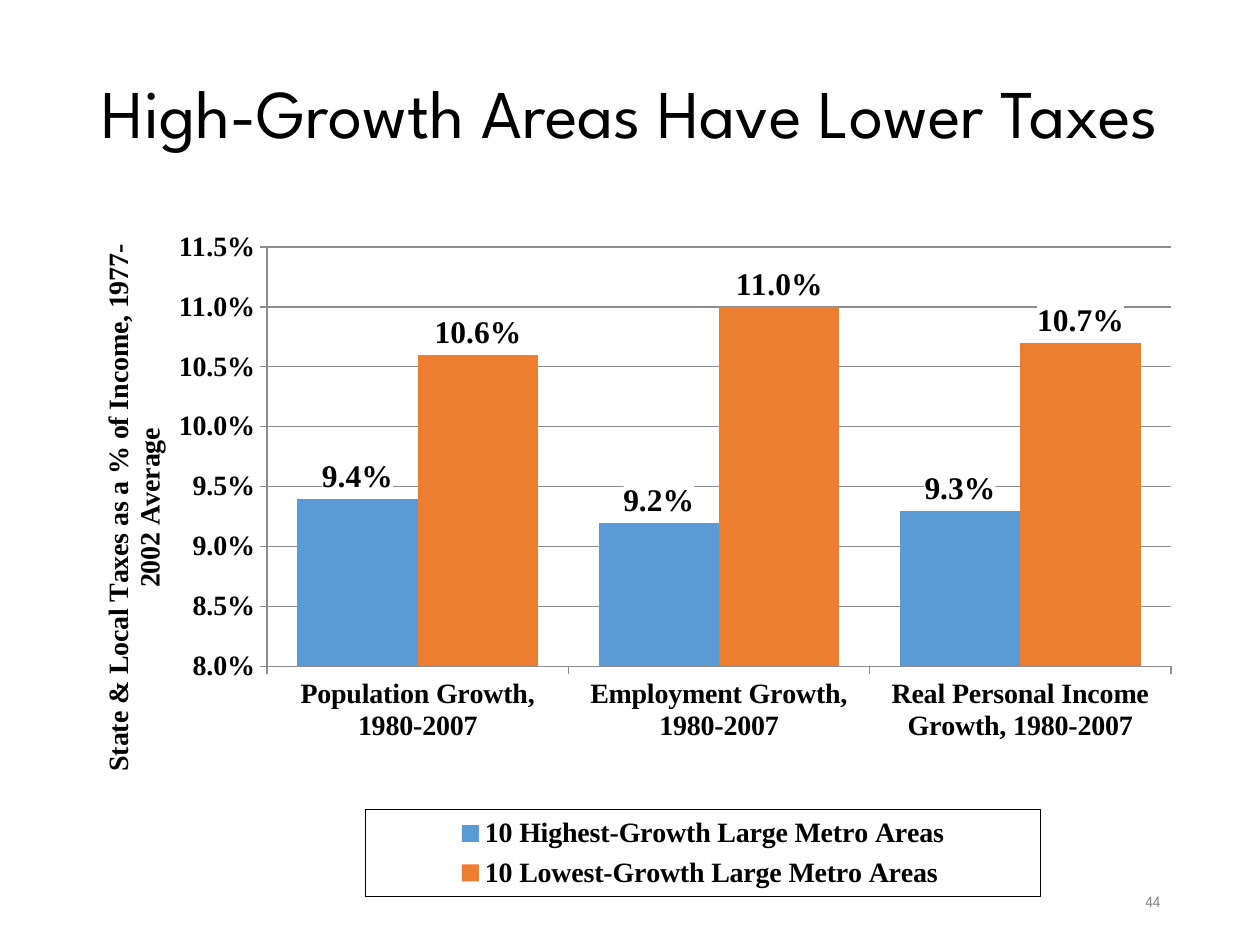
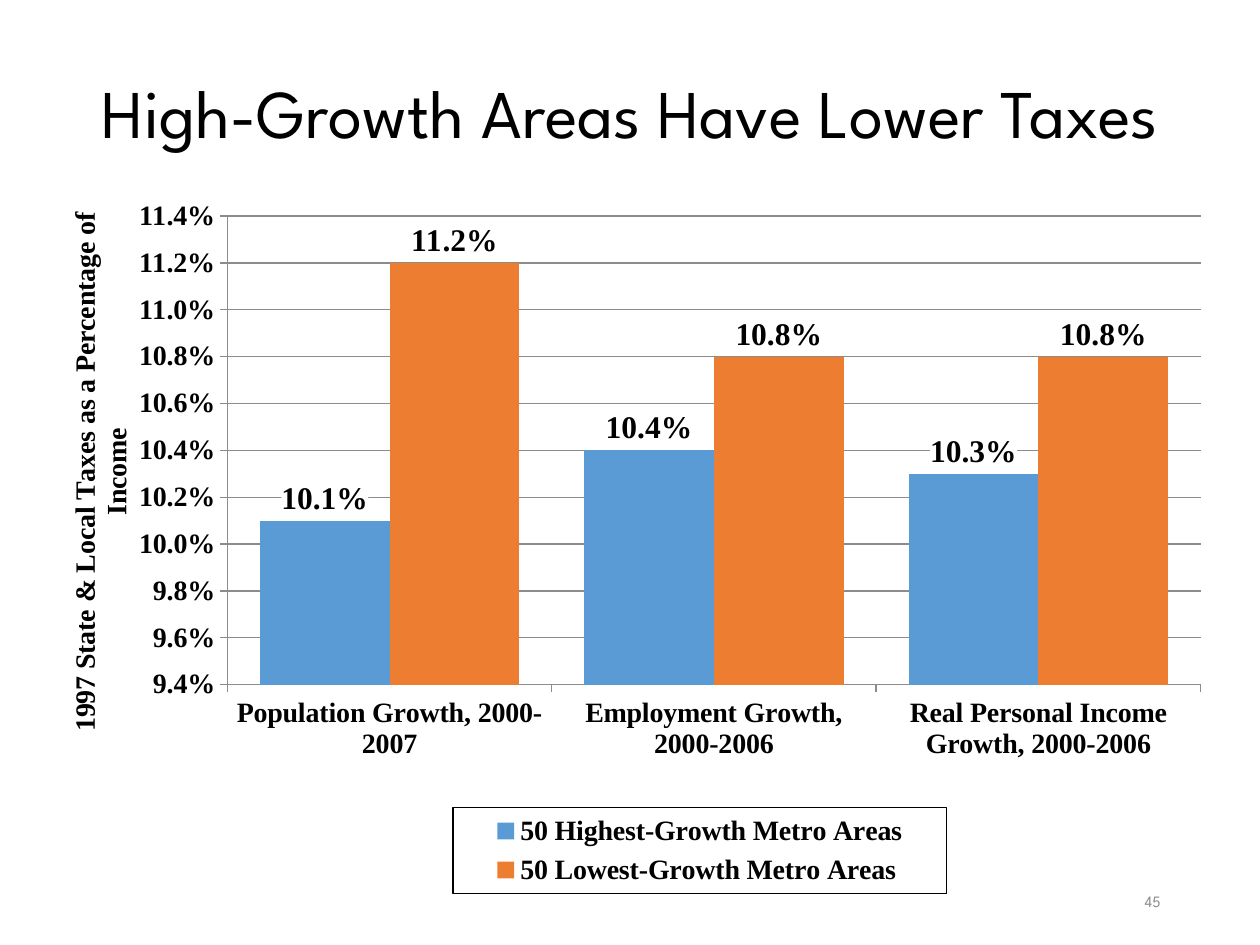
from dataclasses import dataclass
from lxml.etree import SubElement
from pptx import Presentation
from pptx.chart.data import CategoryChartData
from pptx.dml.color import RGBColor
from pptx.enum.chart import XL_CHART_TYPE, XL_LABEL_POSITION, XL_LEGEND_POSITION, XL_TICK_MARK
from pptx.enum.text import MSO_ANCHOR, PP_ALIGN
from pptx.oxml import parse_xml
from pptx.oxml.ns import nsdecls, qn
from pptx.util import Inches, Pt


@dataclass(frozen=True)
class Theme:
    black: RGBColor = RGBColor(0, 0, 0)
    gray: RGBColor = RGBColor(0x8C, 0x8C, 0x8C)
    series: tuple = (RGBColor(0x5B, 0x9B, 0xD5), RGBColor(0xED, 0x7D, 0x31))
    head_font: str = "League Spartan"
    chart_font: str = "Times New Roman"
    title: int = 39
    value: int = 18
    axis: int = 16
    footer: int = 9


T = Theme()


def write(tf, text, size, color=T.black, font=T.head_font, bold=False, align=PP_ALIGN.CENTER, spacing=None):
    p = tf.paragraphs[0]
    p.alignment, p.line_spacing = align, spacing
    r = p.add_run()
    r.text = text
    r.font.size, r.font.name, r.font.bold = Pt(size), font, bold
    r.font.color.rgb = color


def place(parent, index, target=None, **fractions):
    """Put a manual layout into a chart part, as fractions of the chart."""
    for old in parent.findall(qn("c:layout")):
        parent.remove(old)
    layout = parse_xml(f"<c:layout {nsdecls('c')}/>")
    parent.insert(index, layout)
    manual = SubElement(layout, qn("c:manualLayout"))
    if target:
        SubElement(manual, qn("c:layoutTarget")).set("val", target)
    for key in "xy":
        SubElement(manual, qn(f"c:{key}Mode")).set("val", "edge")
    for key, value in fractions.items():
        SubElement(manual, qn(f"c:{key}")).set("val", str(value))


TITLE = "High-Growth Areas Have Lower Taxes"
MEASURES = ["Population Growth", "Employment Growth", "Real Personal Income Growth"]
SLIDES = [
    dict(number=44, box=(0.5, 1.75, 9, 5.42), scale=(0.08, 0.115, 0.005),
         axis_title="State & Local Taxes as a % of Income, 1977-2002 Average",
         periods=["1980-2007"] * 3,
         series={"10 Highest-Growth Large Metro Areas": (0.094, 0.092, 0.093),
                 "10 Lowest-Growth Large Metro Areas": (0.106, 0.11, 0.107)},
         plot=dict(x=0.18, y=0.039, w=0.797, h=0.614),
         legend=dict(x=0.267, y=0.863, w=0.595, h=0.127),
         axis_at=dict(x=0.028, y=0.028)),
    dict(number=45, box=(0.33, 1.5, 9.33, 5.67), scale=(0.094, 0.114, 0.002),
         axis_title="1997 State & Local Taxes as a Percentage of Income",
         periods=["2000-2007", "2000-2006", "2000-2006"],
         series={"50 Highest-Growth Metro Areas": (0.101, 0.104, 0.103),
                 "50 Lowest-Growth Metro Areas": (0.112, 0.108, 0.108)},
         plot=dict(x=0.158, y=0.038, w=0.828, h=0.656),
         legend=dict(x=0.35, y=0.866, w=0.42, h=0.12),
         axis_at=dict(x=0.017, y=0.026)),
]

prs = Presentation()
prs.slide_width, prs.slide_height = Inches(10), Inches(7.5)

for d in SLIDES:
    s = prs.slides.add_slide(prs.slide_layouts[5])
    title = s.shapes.title
    title.left, title.top, title.width, title.height = (Inches(v) for v in (0, 0.3, 10, 1.25))
    title.text_frame.vertical_anchor = MSO_ANCHOR.MIDDLE
    write(title.text_frame, TITLE, T.title, spacing=0.9)

    data = CategoryChartData(number_format="0.0%")
    data.categories = [f"{m}, {period}" for m, period in zip(MEASURES, d["periods"])]
    for name, values in d["series"].items():
        data.add_series(name, values)
    box = (Inches(v) for v in d["box"])
    chart = s.shapes.add_chart(XL_CHART_TYPE.COLUMN_CLUSTERED, *box, data).chart
    chart.has_title = False
    chart.font.name, chart.font.size, chart.font.bold = T.chart_font, Pt(T.axis), True
    chart.font.color.rgb = T.black

    plot = chart.plots[0]
    plot.gap_width, plot.overlap, plot.vary_by_categories = 50, 0, False
    for series, color in zip(plot.series, T.series):
        series.format.fill.solid()
        series.format.fill.fore_color.rgb = color
        labels = series.data_labels
        labels.show_value, labels.position = True, XL_LABEL_POSITION.OUTSIDE_END
        labels.number_format, labels.number_format_is_linked = "0.0%", False
        labels.font.size, labels.font.bold, labels.font.name = Pt(T.value), True, T.chart_font
        labels.font.color.rgb = T.black
        labels._element.find(qn("c:numFmt")).addnext(parse_xml(
            f'<c:spPr {nsdecls("c", "a")}><a:solidFill><a:srgbClr val="FFFFFF"/></a:solidFill></c:spPr>'))

    va, ca = chart.value_axis, chart.category_axis
    va.minimum_scale, va.maximum_scale, va.major_unit = d["scale"]
    va.tick_labels.number_format, va.tick_labels.number_format_is_linked = "0.0%", False
    va.has_major_gridlines = True
    for axis in (va, ca):
        axis.major_tick_mark = XL_TICK_MARK.OUTSIDE
        axis.tick_labels.font.size, axis.tick_labels.font.bold = Pt(T.axis), True
    for line in (va.format.line, ca.format.line, va.major_gridlines.format.line):
        line.color.rgb, line.width = T.gray, Pt(0.75)

    tf = va.axis_title.text_frame
    write(tf, d["axis_title"], T.axis, font=T.chart_font, bold=True)
    body = tf._txBody.find(qn("a:bodyPr"))
    body.set("rot", "-5400000")
    body.set("vert", "horz")
    place(va.axis_title._element, 1, **d["axis_at"])

    chart.has_legend = True
    legend = chart.legend
    legend.position, legend.include_in_layout = XL_LEGEND_POSITION.BOTTOM, False
    legend.font.size, legend.font.bold, legend.font.name = Pt(T.axis), True, T.chart_font
    place(legend._element, 1, **d["legend"])
    legend._element.find(qn("c:overlay")).addnext(parse_xml(
        f'<c:spPr {nsdecls("c", "a")}><a:ln w="9525"><a:solidFill>'
        f'<a:srgbClr val="{T.black}"/></a:solidFill></a:ln></c:spPr>'))
    place(chart._chartSpace.chart.plotArea, 0, "inner", **d["plot"])

    tf = s.shapes.add_textbox(Inches(7.06), Inches(6.95), Inches(2.25), Inches(0.4)).text_frame
    tf.word_wrap, tf.vertical_anchor = True, MSO_ANCHOR.MIDDLE
    write(tf, str(d["number"]), T.footer, T.gray, align=PP_ALIGN.RIGHT)

prs.save("out.pptx")
